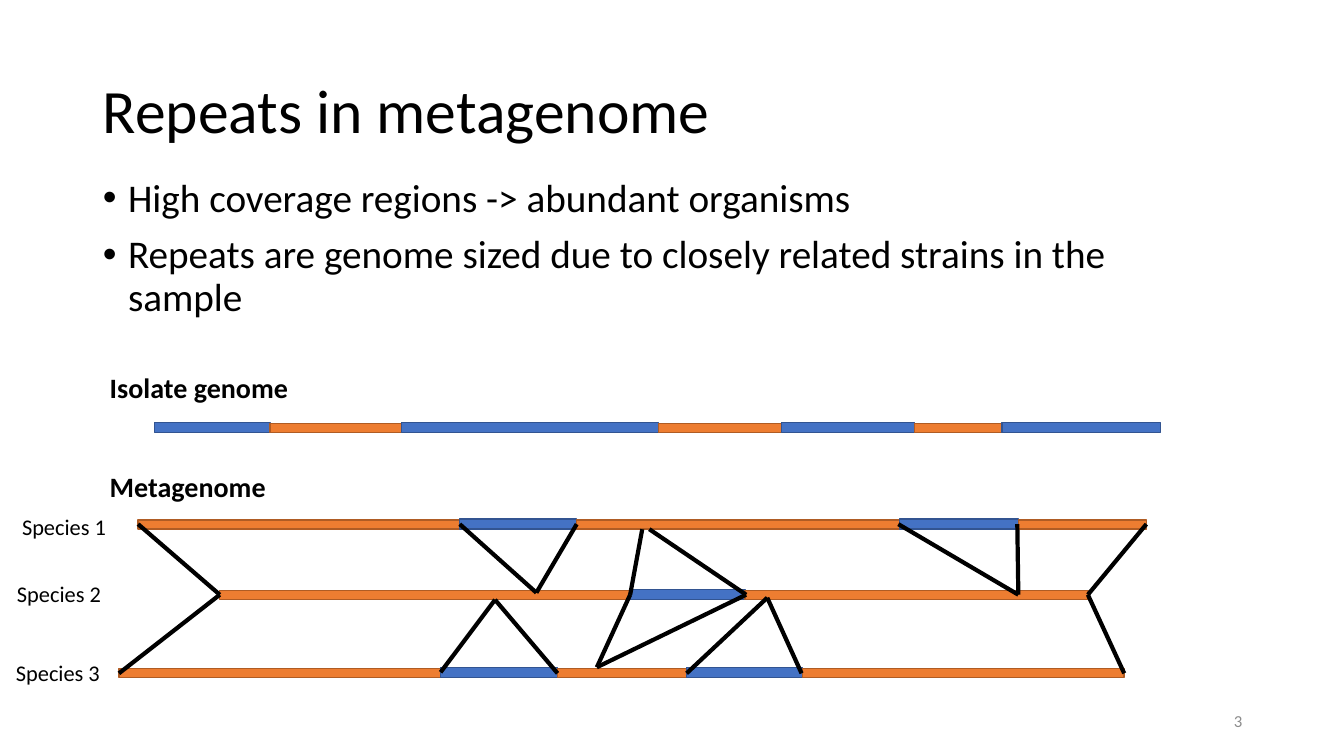
from itertools import cycle, pairwise

from lxml.etree import SubElement
from pptx import Presentation
from pptx.dml.color import RGBColor
from pptx.enum.shapes import MSO_CONNECTOR, MSO_SHAPE
from pptx.enum.text import MSO_ANCHOR, MSO_AUTO_SIZE, PP_ALIGN
from pptx.oxml.ns import qn
from pptx.util import Inches, Pt

BLACK, GREY = "000000", "8C8C8C"
UNIQUE = ("4472C4", "325491")
REPEAT = ("ED7D31", "AF5C24")


def color(hex_code):
    return RGBColor.from_string(hex_code)


class GenomeSlide:
    font = "Calibri"

    def __init__(self, deck):
        self.slide = deck.slides.add_slide(deck.slide_layouts[1])
        self.shapes = self.slide.shapes

    def add_text(self, paragraph, text, size, ink=BLACK, bold=False):
        run = paragraph.add_run()
        run.text = text
        run.font.name = self.font
        run.font.size = Pt(size)
        run.font.bold = bold
        run.font.color.rgb = color(ink)

    def place(self, holder, left, top, width, height, anchor):
        holder.left, holder.top = Inches(left), Inches(top)
        holder.width, holder.height = Inches(width), Inches(height)
        frame = holder.text_frame
        frame.word_wrap = True
        frame.auto_size = MSO_AUTO_SIZE.NONE
        frame.vertical_anchor = anchor
        return frame

    def title(self, text, *box):
        frame = self.place(self.shapes.title, *box, MSO_ANCHOR.MIDDLE)
        heading = frame.paragraphs[0]
        heading.alignment = PP_ALIGN.LEFT
        heading.line_spacing = 0.9
        self.add_text(heading, text, 44)

    def bullets(self, points, *box):
        frame = self.place(self.slide.placeholders[1], *box, MSO_ANCHOR.TOP)
        for index, point in enumerate(points):
            item = frame.add_paragraph() if index else frame.paragraphs[0]
            item.line_spacing = 0.9
            item.space_before = Pt(10)
            properties = item._p.get_or_add_pPr()
            properties.set("marL", str(Inches(0.25)))
            properties.set("indent", str(-Inches(0.25)))
            SubElement(properties, qn("a:buFont")).set("typeface", "Arial")
            SubElement(properties, qn("a:buChar")).set("char", "•")
            self.add_text(item, point, 28)

    def label(self, text, left, top, width, height, size, ink=BLACK,
              bold=False, align=PP_ALIGN.LEFT, anchor=MSO_ANCHOR.TOP):
        box = self.shapes.add_textbox(0, 0, 0, 0)
        frame = self.place(box, left, top, width, height, anchor)
        frame.paragraphs[0].alignment = align
        self.add_text(frame.paragraphs[0], text, size, ink, bold)

    def genome(self, top, edges, first, second):
        """Draw segments of alternating style between neighbouring edges."""
        for (start, end), style in zip(pairwise(edges), cycle((first, second))):
            inset = 0.01 if style == REPEAT else 0
            segment = self.shapes.add_shape(
                MSO_SHAPE.RECTANGLE, Inches(start), Inches(top + inset),
                Inches(end - start), Inches(0.1 - inset))
            segment.shadow.inherit = False
            fill, outline = style
            segment.fill.solid()
            segment.fill.fore_color.rgb = color(fill)
            segment.line.color.rgb = color(outline)
            segment.line.width = Pt(1)

    def links(self, points):
        """Join successive points with straight lines."""
        for start, end in pairwise(points):
            link = self.shapes.add_connector(
                MSO_CONNECTOR.STRAIGHT, *map(Inches, start + end))
            link.line.color.rgb = color(BLACK)
            link.line.width = Pt(3)
            SubElement(link._element.spPr, qn("a:effectLst"))


def main():
    deck = Presentation()
    deck.slide_width, deck.slide_height = Inches(13.33), Inches(7.5)
    page = GenomeSlide(deck)

    # Title and points
    page.title("Repeats in metagenome", 0.92, 0.4, 11.5, 1.45)
    page.bullets([
        "High coverage regions -> abundant organisms",
        "Repeats are genome sized due to closely related strains in the sample",
    ], 0.92, 1.72, 11.12, 1.87)

    # Isolate genome
    page.label("Isolate genome", 0.99, 3.63, 2.23, 0.44, 20, bold=True)
    page.genome(4.19, [1.53, 2.68, 3.98, 6.53, 7.75, 9.07, 9.94, 11.51],
                UNIQUE, REPEAT)

    # Metagenome: name, label position, bar top, segment edges
    page.label("Metagenome", 0.99, 4.61, 2.23, 0.44, 20, bold=True)
    species = [
        ("Species 1", 0.12, 5.04, 5.15, [1.37, 4.56, 5.72, 8.92, 10.1, 11.37]),
        ("Species 2", 0.07, 5.71, 5.85, [2.18, 6.25, 7.39, 10.79]),
        ("Species 3", 0.06, 6.49, 6.62, [1.18, 4.37, 5.53, 6.81, 7.96, 11.15]),
    ]
    for name, left, label_top, bar_top, edges in species:
        page.genome(bar_top, edges, REPEAT, UNIQUE)
        page.label(name, left, label_top, 1.05, 0.37, 16)

    # Links between matching regions
    matches = [
        [(1.37, 5.2), (2.18, 5.9), (1.18, 6.68)],
        [(4.56, 5.2), (5.32, 5.88), (5.72, 5.2)],
        [(6.37, 5.25), (6.25, 5.9), (5.92, 6.62), (7.4, 5.9), (6.44, 5.25)],
        [(8.91, 5.2), (10.1, 5.9), (10.09, 5.2)],
        [(11.37, 5.2), (10.79, 5.9), (11.15, 6.68)],
        [(4.37, 6.67), (4.91, 5.95), (5.53, 6.68)],
        [(6.81, 6.68), (7.61, 5.93), (7.95, 6.68)],
    ]
    for match in matches:
        page.links(match)

    # Slide number
    page.label("3", 9.42, 6.95, 3, 0.4, 12, GREY,
               align=PP_ALIGN.RIGHT, anchor=MSO_ANCHOR.MIDDLE)

    deck.save("out.pptx")


if __name__ == "__main__":
    main()
